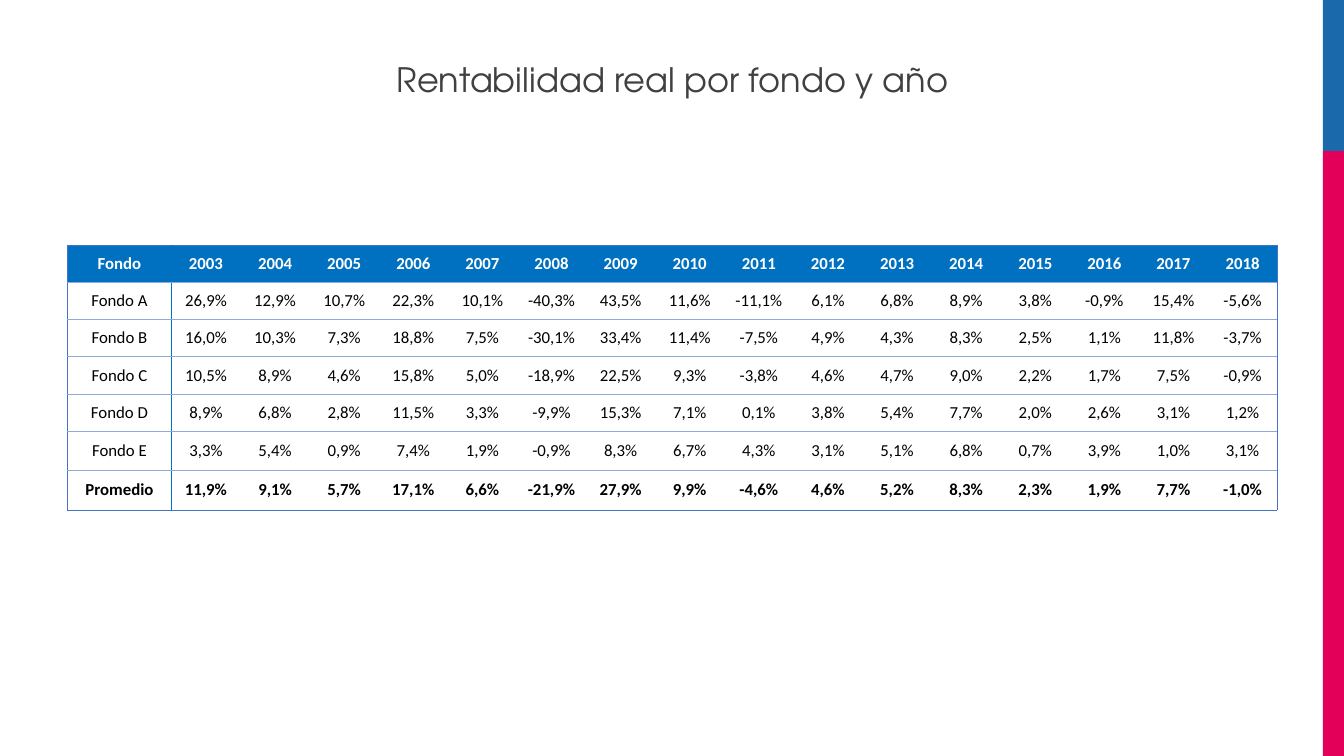
from dataclasses import dataclass
from lxml.etree import SubElement
from pptx import Presentation
from pptx.dml.color import RGBColor
from pptx.enum.shapes import MSO_SHAPE
from pptx.enum.text import MSO_ANCHOR, PP_ALIGN
from pptx.oxml.ns import qn
from pptx.slide import Slide
from pptx.table import _Cell
from pptx.text.text import TextFrame
from pptx.util import Inches, Pt

BLUE, EDGE, RULE = "0070C0", "4472C4", "8EA9DB"
ZERO = dict.fromkeys(
    ("margin_left", "margin_top", "margin_right", "margin_bottom"), 0
)
TITLE = {"name": "TeX Gyre Adventor", "size": Pt(24), "bold": False}
BODY = {"name": "Calibri", "size": Pt(12), "bold": False}
BOLD = BODY | {"bold": True}
HIGHS = [0.37] * 5 + [0.39] * 2
FIRST, WIDE = 1.03, 10.97 / 16

FUNDS = {
    "Fondo A": "26,9 12,9 10,7 22,3 10,1 -40,3 43,5 11,6 -11,1 6,1 6,8 8,9 3,8 -0,9 15,4 -5,6",
    "Fondo B": "16,0 10,3 7,3 18,8 7,5 -30,1 33,4 11,4 -7,5 4,9 4,3 8,3 2,5 1,1 11,8 -3,7",
    "Fondo C": "10,5 8,9 4,6 15,8 5,0 -18,9 22,5 9,3 -3,8 4,6 4,7 9,0 2,2 1,7 7,5 -0,9",
    "Fondo D": "8,9 6,8 2,8 11,5 3,3 -9,9 15,3 7,1 0,1 3,8 5,4 7,7 2,0 2,6 3,1 1,2",
    "Fondo E": "3,3 5,4 0,9 7,4 1,9 -0,9 8,3 6,7 4,3 3,1 5,1 6,8 0,7 3,9 1,0 3,1",
    "Promedio": "11,9 9,1 5,7 17,1 6,6 -21,9 27,9 9,9 -4,6 4,6 5,2 8,3 2,3 1,9 7,7 -1,0",
}


@dataclass
class Band:
    top: float
    high: float
    tint: str


BANDS = [Band(0, 1.5, "1A69AA"), Band(1.5, 6, "E30058")]


def color(tint: str) -> RGBColor:
    return RGBColor.from_string(tint)


def apply(item: object, style: dict) -> None:
    for key, value in style.items():
        setattr(item, key, value)


def write(frame: TextFrame, text: str, style: dict, tint: str) -> None:
    line = frame.paragraphs[0]
    line.alignment = PP_ALIGN.CENTER
    run = line.add_run()
    run.text = text
    apply(run.font, style)
    run.font.color.rgb = color(tint)


def draw_band(slide: Slide, band: Band) -> None:
    shape = slide.shapes.add_shape(
        MSO_SHAPE.RECTANGLE, Inches(13.12), Inches(band.top), Inches(0.21), Inches(band.high)
    )
    shape.shadow.inherit = False
    shape.fill.solid()
    shape.fill.fore_color.rgb = color(band.tint)
    shape.line.fill.background()


def draw_title(slide: Slide, text: str) -> None:
    box = slide.shapes.add_textbox(Inches(2.17), Inches(0.58), Inches(9), Inches(0.4))
    apply(box.text_frame, ZERO | {"word_wrap": True})
    write(box.text_frame, text, TITLE, "404040")


def border(cell: _Cell, sides: dict[str, str | None]) -> None:
    props = cell._tc.get_or_add_tcPr()
    for place, (side, tint) in enumerate(sides.items()):
        line = SubElement(props, qn(f"a:ln{side}"), w=str(Pt(0.5)))
        props.insert(place, line)
        if tint:
            fill = SubElement(line, qn("a:solidFill"))
            SubElement(fill, qn("a:srgbClr"), val=tint)
        else:
            SubElement(line, qn("a:noFill"))


def draw_table(slide: Slide, rows: list[list[str]]) -> None:
    last, end = len(rows) - 1, len(rows[0]) - 1
    table = slide.shapes.add_table(
        last + 1, end + 1, Inches(0.67), Inches(2.43), Inches(12), Inches(sum(HIGHS))
    ).table
    apply(table, {"first_row": False, "horz_banding": False})
    for col, column in enumerate(table.columns):
        column.width = Inches(WIDE if col else FIRST)
    for row, values in enumerate(rows):
        table.rows[row].height = Inches(HIGHS[row])
        for col, text in enumerate(values):
            cell = table.cell(row, col)
            apply(cell, ZERO | {"vertical_anchor": MSO_ANCHOR.MIDDLE})
            if row:
                cell.fill.background()
            else:
                cell.fill.solid()
                cell.fill.fore_color.rgb = color(BLUE)
            style = BOLD if row in (0, last) else BODY
            write(cell.text_frame, text, style, "000000" if row else "FFFFFF")
            border(cell, {
                "L": {0: EDGE, 1: BLUE}.get(col),
                "R": {0: BLUE, end: EDGE}.get(col),
                "T": RULE if row else EDGE,
                "B": EDGE if row == last else RULE,
            })


def main() -> None:
    deck = Presentation()
    apply(deck, {"slide_width": Inches(13.33), "slide_height": Inches(7.5)})
    slide = deck.slides.add_slide(deck.slide_layouts[6])
    for band in BANDS:
        draw_band(slide, band)
    draw_title(slide, "Rentabilidad real por fondo y año")
    head = ["Fondo", *map(str, range(2003, 2019))]
    body = [[fund, *(f"{rate}%" for rate in rates.split())] for fund, rates in FUNDS.items()]
    draw_table(slide, [head, *body])
    deck.save("out.pptx")


if __name__ == "__main__":
    main()
